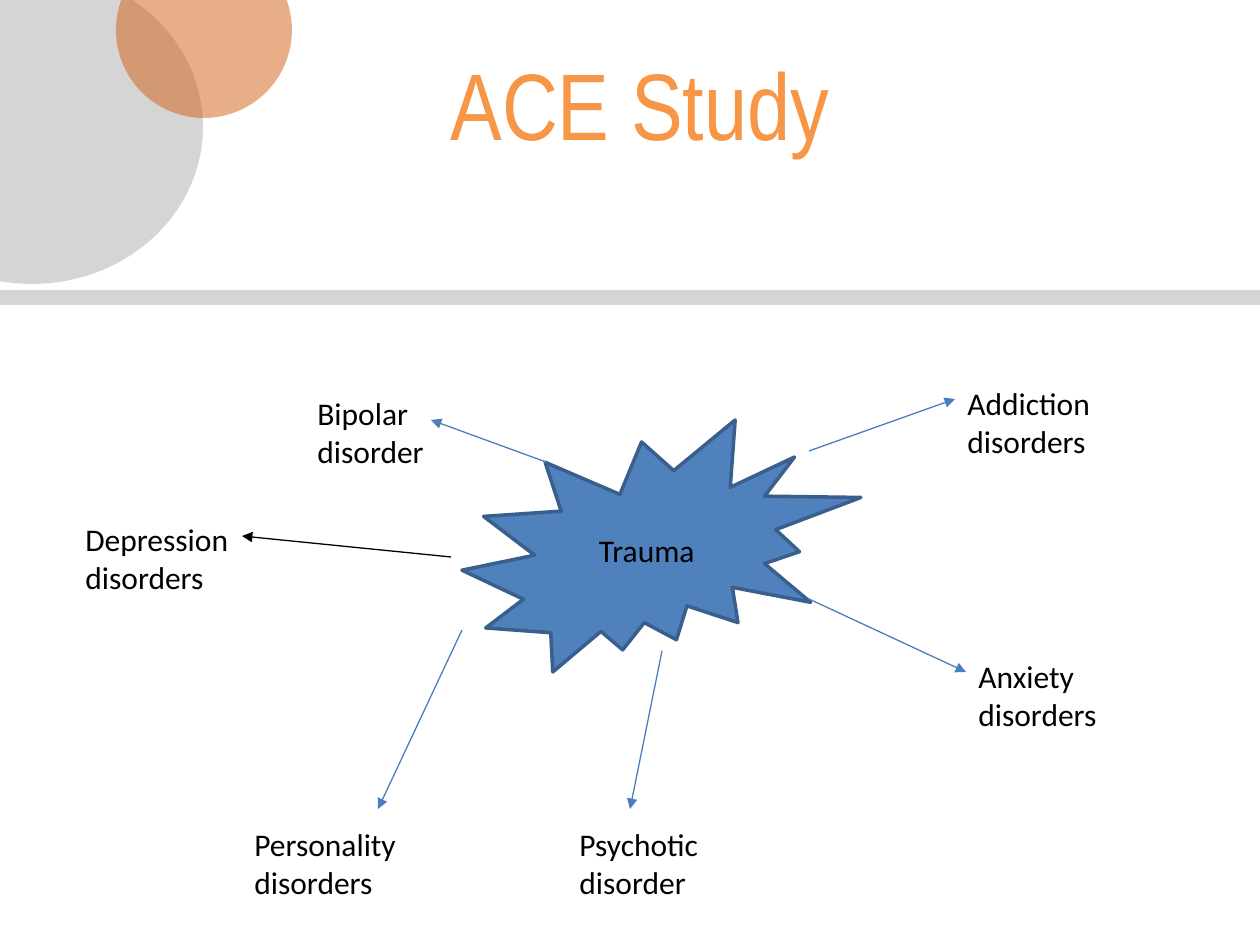
from lxml.etree import SubElement
from pptx import Presentation
from pptx.dml.color import RGBColor
from pptx.enum.shapes import MSO_CONNECTOR, MSO_SHAPE
from pptx.enum.text import MSO_ANCHOR, MSO_AUTO_SIZE, PP_ALIGN
from pptx.oxml.ns import qn
from pptx.util import Pt

SCALE = 914400 / 126
WIDTH, HEIGHT = 1260, 945
GREY, RUST, ORANGE = "ADADAD", "D35E13", "F79646"
BLUE, NAVY, STEEL, BLACK = "4F81BD", "3A5F8C", "4B7EBC", "000000"

RAYS = [
    ("Depression disorders", (0, 136, 199), (378, 179), (169, 158), BLACK),
    ("Bipolar disorder", (232, 10, 146), (473, 84), (358, 42), STEEL),
    ("Personality disorders", (169, 441, 199), (389, 252), (305, 431), STEEL),
    ("Addiction disorders", (882, 0, 189), (736, 73), (882, 21), STEEL),
    ("Psychotic disorder", (494, 441, 158), (589, 273), (557, 431), STEEL),
    ("Anxiety disorders", (893, 273, 189), (736, 221), (893, 294), STEEL),
]


def px(*nums):
    return [round(n * SCALE) for n in nums]


def paint(item, color):
    item.rgb = RGBColor.from_string(color)


def write(frame, text, size, font, color, align=None):
    frame.word_wrap = True
    para = frame.paragraphs[0]
    para.alignment = align
    run = para.add_run()
    run.text = text
    run.font.size = Pt(size)
    run.font.name = font
    paint(run.font.color, color)


def add_box(slide, box, *style):
    frame = slide.shapes.add_textbox(*px(*box)).text_frame
    write(frame, *style)
    frame.auto_size = MSO_AUTO_SIZE.SHAPE_TO_FIT_TEXT


def add_form(slide, kind, box, color, alpha=None):
    form = slide.shapes.add_shape(kind, *px(*box))
    form.shadow.inherit = False
    form.fill.solid()
    paint(form.fill.fore_color, color)
    form.line.fill.background()
    if alpha:
        tint = form.fill._xPr.find(".//" + qn("a:srgbClr"))
        SubElement(tint, qn("a:alpha"), val=str(alpha * 1000))
    return form


def add_arrow(slide, start, end, color):
    arrow = slide.shapes.add_connector(MSO_CONNECTOR.STRAIGHT, *px(*start, *end))
    arrow.line.width = Pt(0.75)
    paint(arrow.line.color, color)
    SubElement(arrow.line._get_or_add_ln(), qn("a:tailEnd"), type="triangle")
    SubElement(arrow._element.spPr, qn("a:effectLst"))


def add_header(slide, left, top, width, height):
    add_form(slide, MSO_SHAPE.RECTANGLE, (left, top + height - 15, width, 15), GREY, 50)
    add_form(slide, MSO_SHAPE.OVAL, (left - 139, top - 30, 342, 314), GREY, 50)
    add_form(slide, MSO_SHAPE.OVAL, (left + 116, top - 58, 176, 176), RUST, 50)
    add_box(slide, (left + 325, top + 40, width // 2, 127),
            "ACE Study", 54, "Arial Narrow", ORANGE, PP_ALIGN.CENTER)


def add_map(slide, left, top):
    burst = add_form(slide, MSO_SHAPE.EXPLOSION2, (left + 389, top + 42, 399, 252), BLUE)
    burst.line.width = Pt(2)
    paint(burst.line.color, NAVY)
    burst.text_frame.vertical_anchor = MSO_ANCHOR.MIDDLE
    write(burst.text_frame, "Trauma", 18, "Calibri", BLACK, PP_ALIGN.CENTER)
    for text, (x, y, wide), start, end, color in RAYS:
        ends = [(left + a, top + b) for a, b in (start, end)]
        add_arrow(slide, *ends, color)
        add_box(slide, (left + x, top + y, wide, 89), text, 18, "Calibri", BLACK)


def main():
    deck = Presentation()
    deck.slide_width, deck.slide_height = px(WIDTH, HEIGHT)
    slide = deck.slides.add_slide(deck.slide_layouts[6])
    add_header(slide, 0, 0, WIDTH, 305)
    add_map(slide, 73, 378)
    deck.save("out.pptx")


if __name__ == "__main__":
    main()
